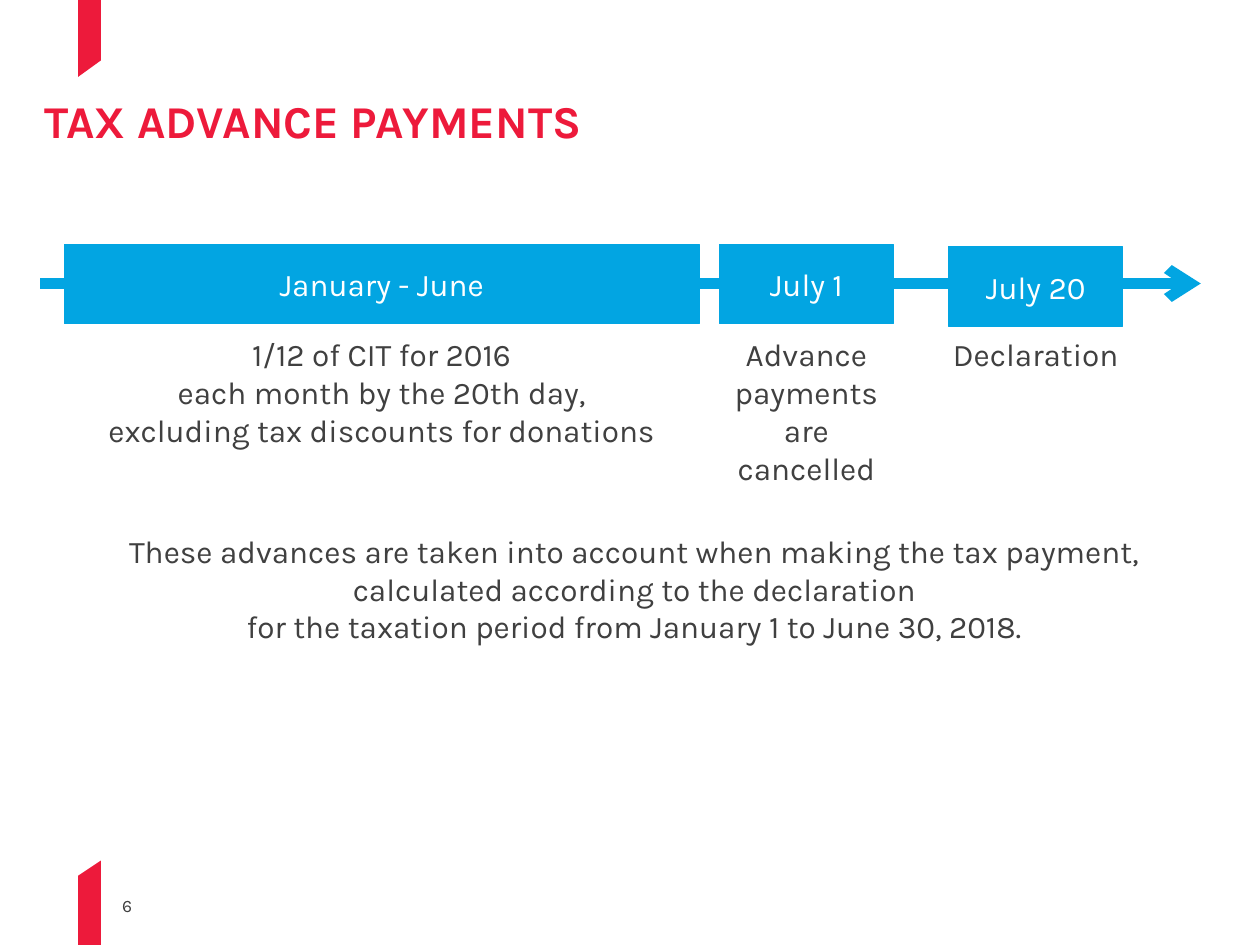
from lxml.etree import SubElement
from pptx import Presentation
from pptx.dml.color import RGBColor
from pptx.enum.shapes import MSO_CONNECTOR, MSO_SHAPE
from pptx.enum.text import MSO_ANCHOR, PP_ALIGN
from pptx.oxml.ns import qn
from pptx.util import Inches, Pt

COLORS = {"red": "ED1A3B", "blue": "02A5E2", "text": "404040", "white": "FFFFFF"}

presentation = Presentation()
presentation.slide_width = Inches(10)
presentation.slide_height = Inches(7.5)
slide = presentation.slides.add_slide(presentation.slide_layouts[6])


def share(x, y):
    """Turn percentages of the slide's width and height into lengths."""
    return (round(presentation.slide_width * x / 100),
            round(presentation.slide_height * y / 100))


def write(shape, text, size=18, color="text", bold=False, align=PP_ALIGN.CENTER,
          anchor=MSO_ANCHOR.TOP, inset=0, line_spacing=None):
    frame = shape.text_frame
    frame.word_wrap = True
    frame.vertical_anchor = anchor
    frame.margin_left = frame.margin_right = Inches(inset)
    frame.margin_top = frame.margin_bottom = Inches(inset)
    frame.text = text
    for paragraph in frame.paragraphs:
        paragraph.alignment = align
        paragraph.line_spacing = line_spacing
        font = paragraph.font
        font.name, font.size, font.bold = "Karla", Pt(size), bold
        font.color.rgb = RGBColor.from_string(COLORS[color])


# Red ribbons at the top and bottom edges
ribbon_left, ribbon_right = 6.2, 8
for edge, short_end, long_end in [(100, 92.67, 91.07), (0, 8.13, 6.4)]:
    corners = [share(ribbon_left, short_end), share(ribbon_left, edge),
               share(ribbon_right, edge), share(ribbon_right, long_end)]
    builder = slide.shapes.build_freeform(*corners[0])
    builder.add_line_segments(corners[1:], close=True)
    ribbon = builder.convert_to_shape()
    ribbon.shadow.inherit = False
    ribbon.fill.solid()
    ribbon.fill.fore_color.rgb = RGBColor.from_string(COLORS["red"])
    ribbon.line.fill.background()

# Page number, title and closing note
page_number = slide.shapes.add_textbox(*share(9.7, 94.67), *share(4.5, 2.27))
write(page_number, "6", size=10, align=PP_ALIGN.LEFT, anchor=MSO_ANCHOR.BOTTOM)

title = slide.shapes.add_textbox(*share(3.5, 10.93), *share(92.6, 4.67))
write(title, "TAX ADVANCE PAYMENTS", size=26, color="red", bold=True,
      align=PP_ALIGN.LEFT, line_spacing=0.8)

note = slide.shapes.add_textbox(*share(4.3, 56.27), *share(92.1, 12.13))
write(note, "These advances are taken into account when making the tax payment,\n"
            "calculated according to the declaration\n"
            "for the taxation period from January 1 to June 30, 2018.")

# Time axis, drawn behind the periods
axis = slide.shapes.add_connector(MSO_CONNECTOR.STRAIGHT, *share(3.2, 30), *share(95.3, 30))
axis.line.color.rgb = RGBColor.from_string(COLORS["blue"])
axis.line.width = Pt(6)
SubElement(axis.line._get_or_add_ln(), qn("a:tailEnd"), type="arrow")
SubElement(axis._element.spPr, qn("a:effectLst"))

# Periods: left, top, width, label, caption, caption height
caption_top, period_height = 35.47, 8.4
periods = [
    (5.1, 25.87, 50.4, "January - June",
     "1/12 of CIT for 2016\neach month by the 20th day,\n"
     "excluding tax discounts for donations", 12.13),
    (57.1, 25.87, 13.8, "July 1", "Advance payments are cancelled", 16.13),
    (75.3, 26.13, 13.8, "July 20", "Declaration", 4),
]
for left, top, width, label, text, text_height in periods:
    period = slide.shapes.add_shape(MSO_SHAPE.RECTANGLE, *share(left, top),
                                    *share(width, period_height))
    period.shadow.inherit = False
    period.fill.solid()
    period.fill.fore_color.rgb = RGBColor.from_string(COLORS["blue"])
    period.line.color.rgb = RGBColor.from_string(COLORS["blue"])
    period.line.width = Pt(0.5)
    write(period, label, color="white", anchor=MSO_ANCHOR.MIDDLE, inset=0.08)

    caption = slide.shapes.add_textbox(*share(left, caption_top), *share(width, text_height))
    write(caption, text)

presentation.save("out.pptx")
